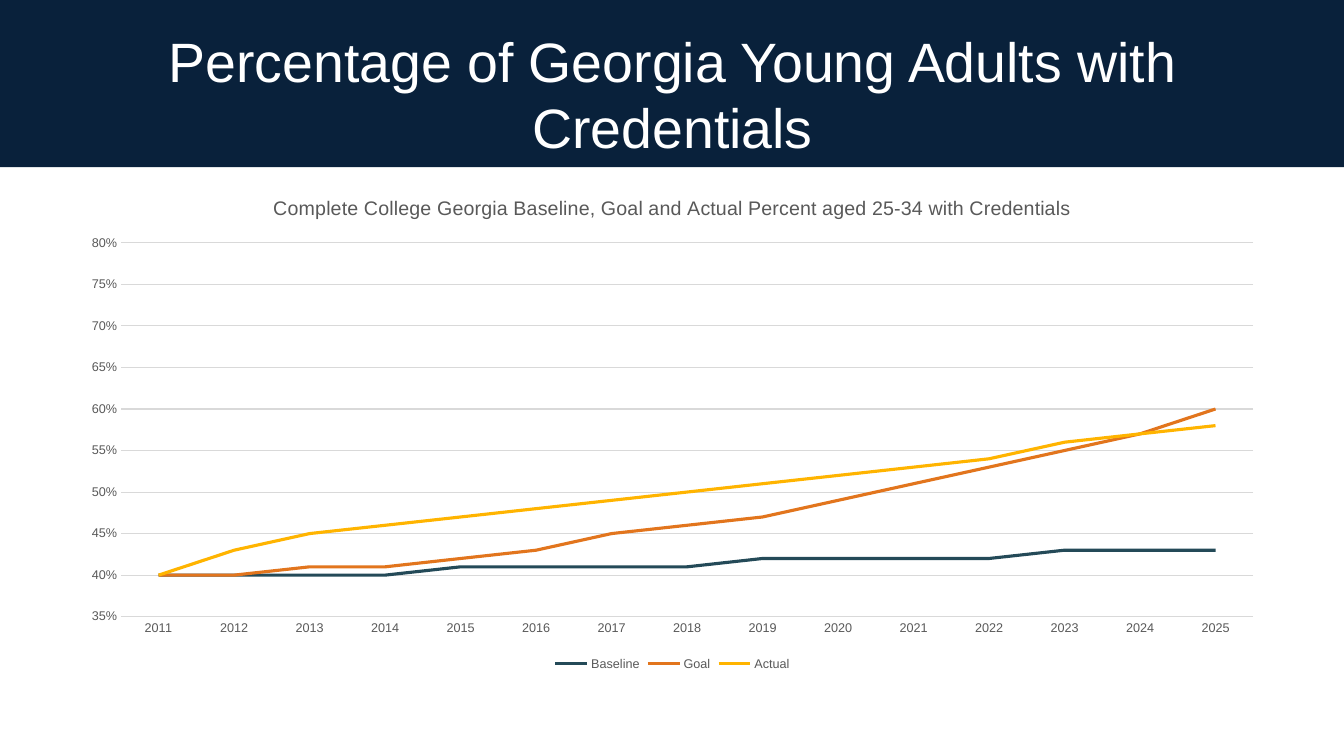
from dataclasses import dataclass

from pptx import Presentation
from pptx.chart.data import CategoryChartData
from pptx.dml.color import RGBColor
from pptx.enum.chart import XL_CHART_TYPE, XL_LEGEND_POSITION, XL_MARKER_STYLE, XL_TICK_MARK
from pptx.enum.shapes import MSO_SHAPE
from pptx.enum.text import MSO_ANCHOR, MSO_AUTO_SIZE, PP_ALIGN
from pptx.util import Inches, Pt

LINE = XL_CHART_TYPE.LINE
BOTTOM = XL_LEGEND_POSITION.BOTTOM
NO_MARK = XL_MARKER_STYLE.NONE
NO_TICK = XL_TICK_MARK.NONE
RECT = MSO_SHAPE.RECTANGLE
MIDDLE = MSO_ANCHOR.MIDDLE
NO_FIT = MSO_AUTO_SIZE.NONE
CENTER = PP_ALIGN.CENTER

NAVY = RGBColor(0x09, 0x21, 0x3B)
WHITE = RGBColor(0xFF, 0xFF, 0xFF)
BLACK = RGBColor(0, 0, 0)
GRAY = RGBColor(0x59, 0x59, 0x59)
SILVER = RGBColor(0xD9, 0xD9, 0xD9)
TEAL = RGBColor(0x24, 0x4A, 0x58)
ORANGE = RGBColor(0xE2, 0x75, 0x1D)
GOLD = RGBColor(0xFF, 0xB4, 0x00)
FONT = "Arial"


@dataclass
class Trend:
    name: str
    color: RGBColor
    values: list[float]


TRENDS = [
    Trend("Baseline", TEAL, [0.4, 0.4, 0.4, 0.4, 0.41, 0.41, 0.41, 0.41,
                             0.42, 0.42, 0.42, 0.42, 0.43, 0.43, 0.43]),
    Trend("Goal", ORANGE, [0.4, 0.4, 0.41, 0.41, 0.42, 0.43, 0.45, 0.46,
                           0.47, 0.49, 0.51, 0.53, 0.55, 0.57, 0.6]),
    Trend("Actual", GOLD, [0.4, 0.43, 0.45, 0.46, 0.47, 0.48, 0.49, 0.5,
                           0.51, 0.52, 0.53, 0.54, 0.56, 0.57, 0.58]),
]


def set_font(font, size: float, color: RGBColor) -> None:
    font.name = FONT
    font.size = Pt(size)
    font.bold = False
    font.color.rgb = color


def write(frame, text: str, *, size: float, color: RGBColor) -> None:
    para = frame.paragraphs[0]
    para.alignment = CENTER
    run = para.add_run()
    run.text = text
    set_font(run.font, size, color)


def set_line(line, color: RGBColor, width: float) -> None:
    line.color.rgb = color
    line.width = Pt(width)


def add_title(slide, text: str) -> None:
    title = slide.shapes.title
    title.left, title.top = Inches(0.67), Inches(0.3)
    title.width, title.height = Inches(12), Inches(1.25)
    frame = title.text_frame
    frame.word_wrap = True
    frame.auto_size = NO_FIT
    frame.vertical_anchor = MIDDLE
    write(frame, text, size=39.6, color=WHITE)

    # Band behind the title
    band = slide.shapes.add_shape(RECT, Inches(-0.28), Inches(-0.17), Inches(14.13), Inches(1.83))
    band.shadow.inherit = False
    band.fill.solid()
    band.fill.fore_color.rgb = NAVY
    band.line.fill.background()
    title.element.addprevious(band.element)


def add_trends(slide, text: str) -> None:
    data = CategoryChartData(number_format="0%")
    data.categories = [str(year) for year in range(2011, 2026)]
    for trend in TRENDS:
        data.add_series(trend.name, trend.values)
    chart = slide.shapes.add_chart(
        LINE, Inches(0.67), Inches(1.75), Inches(12), Inches(4.95), data).chart
    set_font(chart.font, 10, BLACK)

    # Heading and legend
    chart.has_title = True
    write(chart.chart_title.text_frame, text, size=14, color=GRAY)
    chart.chart_title.include_in_layout = False
    chart.has_legend = True
    chart.legend.position = BOTTOM
    chart.legend.include_in_layout = False
    set_font(chart.legend.font, 9, GRAY)

    # Axes
    years, share = chart.category_axis, chart.value_axis
    for axis in (years, share):
        axis.major_tick_mark = axis.minor_tick_mark = NO_TICK
        set_font(axis.tick_labels.font, 9, GRAY)
    set_line(years.format.line, SILVER, 0.75)
    share.format.line.fill.background()
    share.minimum_scale, share.maximum_scale = 0.35, 0.8
    share.major_unit = 0.05
    share.tick_labels.number_format = "0%"
    share.tick_labels.number_format_is_linked = False
    share.has_major_gridlines = True
    set_line(share.major_gridlines.format.line, SILVER, 0.75)

    # Trend lines
    plot = chart.plots[0]
    plot.vary_by_categories = False
    for series, trend in zip(plot.series, TRENDS):
        series.smooth = False
        series.marker.style = NO_MARK
        set_line(series.format.line, trend.color, 2.25)


def main() -> None:
    deck = Presentation()
    deck.slide_width, deck.slide_height = Inches(13.33), Inches(7.5)
    slide = deck.slides.add_slide(deck.slide_layouts.get_by_name("Title Only"))
    add_title(slide, "Percentage of Georgia Young Adults with Credentials")
    add_trends(slide, "Complete College Georgia Baseline, Goal and Actual "
                      "Percent aged 25-34 with Credentials")
    deck.save("out.pptx")


if __name__ == "__main__":
    main()
